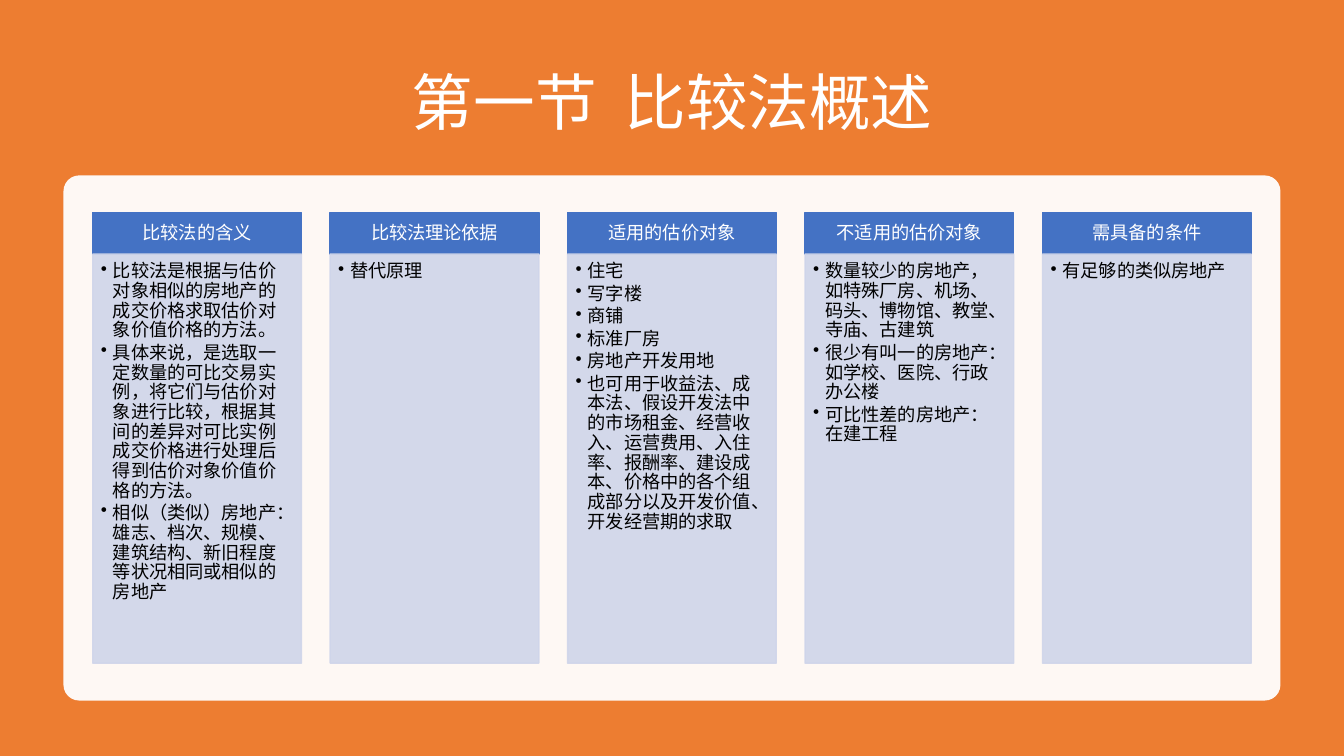
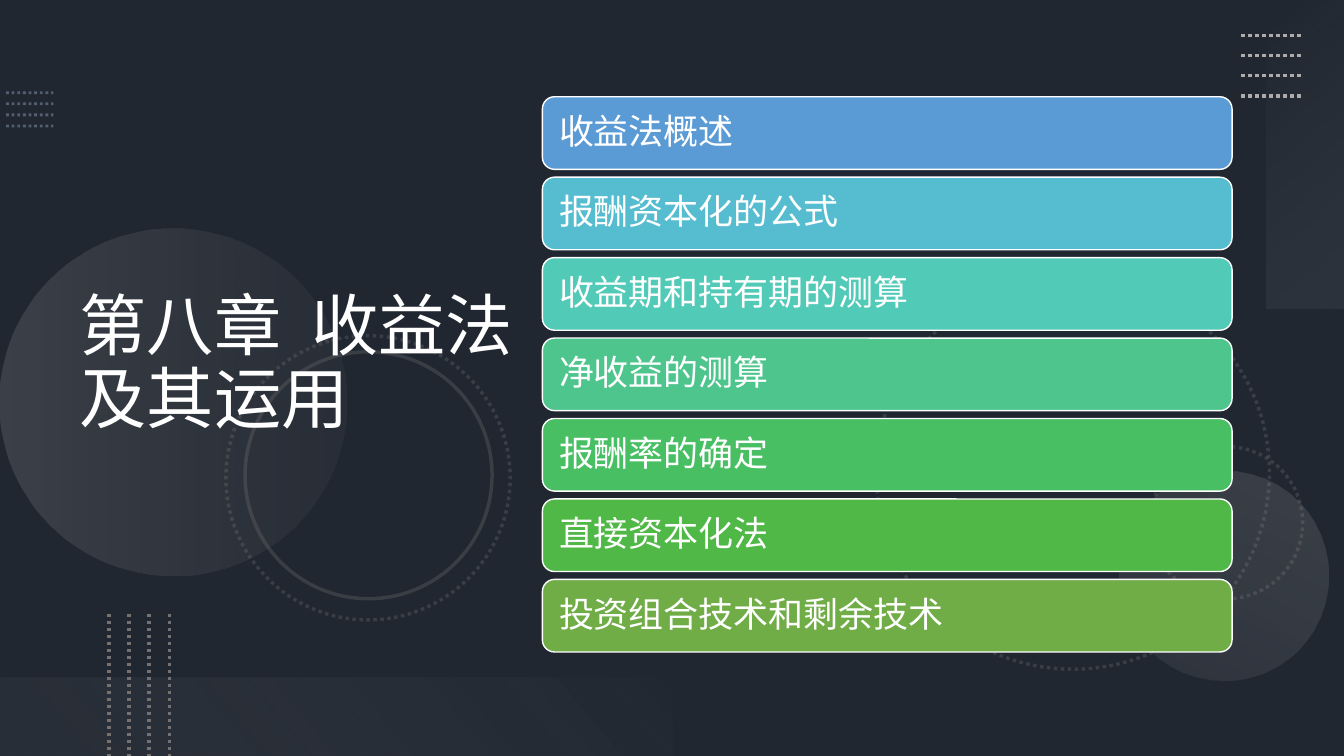
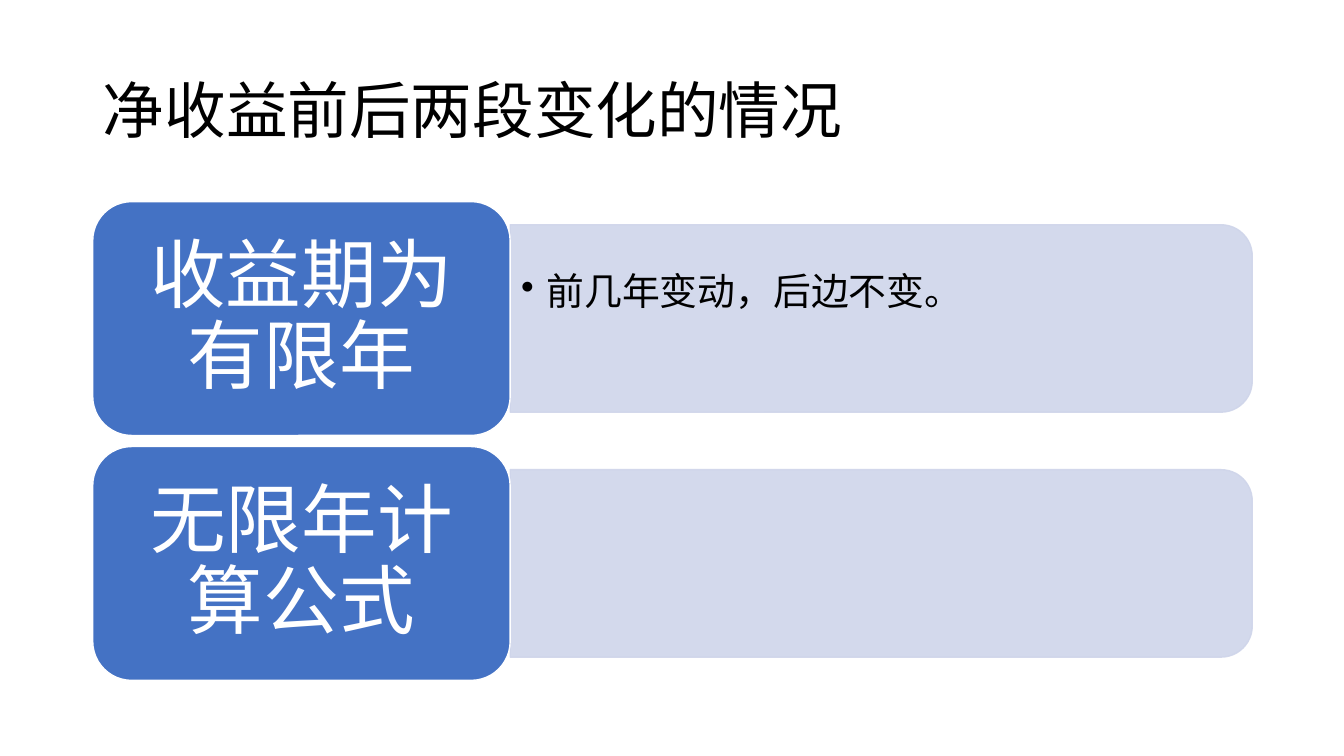
from dataclasses import dataclass

from lxml import etree
from pptx import Presentation
from pptx.dml.color import RGBColor
from pptx.enum.dml import MSO_LINE
from pptx.enum.shapes import MSO_CONNECTOR, MSO_SHAPE
from pptx.enum.text import MSO_ANCHOR, MSO_AUTO_SIZE, PP_ALIGN
from pptx.oxml.ns import qn
from pptx.util import Inches, Pt

RECT, ROUND = MSO_SHAPE.RECTANGLE, MSO_SHAPE.ROUNDED_RECTANGLE
OVAL, ROUND_TOP = MSO_SHAPE.OVAL, MSO_SHAPE.ROUND_2_SAME_RECTANGLE
STRAIGHT, DOTS = MSO_CONNECTOR.STRAIGHT, MSO_LINE.ROUND_DOT
LEFT, CENTER = PP_ALIGN.LEFT, PP_ALIGN.CENTER
TOP, MIDDLE = MSO_ANCHOR.TOP, MSO_ANCHOR.MIDDLE
SLIDE_W, SLIDE_H = 13.33, 7.5
TITLE_ONLY = 5


@dataclass(frozen=True)
class Theme:
    font: str = "Noto Sans CJK SC"
    white: str = "FFFFFF"
    black: str = "000000"
    orange: str = "ED7D31"
    blue: str = "4472C4"
    pale: str = "CFD5EA"
    slate: str = "44546A"
    steel: str = "8497B0"
    grey: str = "767171"
    silver: str = "AFABAB"
    title: int = 44
    chapter: int = 48
    column: int = 13
    item: int = 25
    tile: int = 54
    note: int = 27
    spacing: float = 0.9


T = Theme()


@dataclass(frozen=True)
class Box:
    x: float
    y: float
    w: float
    h: float


@dataclass(frozen=True)
class Stop:
    pos: int
    color: str
    alpha: int


@dataclass(frozen=True)
class Column:
    head: str
    points: list[str]


@dataclass(frozen=True)
class Ring:
    x: float
    y: float
    size: float
    rot: int
    dotted: bool = True


@dataclass(frozen=True)
class Fade:
    kind: int
    box: Box
    rot: int
    angle: int
    stops: list[Stop]


@dataclass(frozen=True)
class LineSet:
    """Four parallel dotted lines: first start, extent and step."""
    x: float
    y: float
    dx: float
    dy: float
    step_x: float
    step_y: float
    color: str
    width: float = 2.5
    alpha: int = 100


# Shared drawing helpers
def rgb(color: str) -> RGBColor:
    return RGBColor.from_string(color)


def set_alpha(sp, parent: str, alpha: int) -> None:
    if alpha < 100:
        clr = sp.element.spPr.find(parent + "/" + qn("a:solidFill") + "/" + qn("a:srgbClr"))
        etree.SubElement(clr, qn("a:alpha")).set("val", str(alpha * 1000))


def add_box(slide, kind, box: Box, fill="", line="", alpha=100, width=1.0, rot=0):
    sp = slide.shapes.add_shape(kind, Inches(box.x), Inches(box.y),
                                Inches(box.w), Inches(box.h))
    sp.shadow.inherit = False
    sp.rotation = rot
    if fill:
        sp.fill.solid()
        sp.fill.fore_color.rgb = rgb(fill)
        set_alpha(sp, ".", alpha)
    else:
        sp.fill.background()
    if line:
        sp.line.color.rgb = rgb(line)
        sp.line.width = Pt(width)
        set_alpha(sp, qn("a:ln"), alpha)
    else:
        sp.line.fill.background()
    return sp


def add_fade(slide, fade: Fade) -> None:
    sp = add_box(slide, fade.kind, fade.box, rot=fade.rot)
    grad = etree.Element(qn("a:gradFill"), rotWithShape="1")
    stops = etree.SubElement(grad, qn("a:gsLst"))
    for stop in fade.stops:
        gs = etree.SubElement(stops, qn("a:gs"), pos=str(stop.pos * 1000))
        clr = etree.SubElement(gs, qn("a:srgbClr"), val=stop.color)
        etree.SubElement(clr, qn("a:alpha"), val=str(stop.alpha * 1000))
    etree.SubElement(grad, qn("a:lin"), ang=str(fade.angle * 60000), scaled="0")
    spPr = sp.element.spPr
    spPr.replace(spPr.find(qn("a:noFill")), grad)


def add_lines(slide, lines: LineSet) -> None:
    for i in range(4):
        x, y = lines.x + i * lines.step_x, lines.y + i * lines.step_y
        cn = slide.shapes.add_connector(STRAIGHT, Inches(x), Inches(y),
                                        Inches(x + lines.dx), Inches(y + lines.dy))
        cn.line.color.rgb = rgb(lines.color)
        cn.line.width = Pt(lines.width)
        cn.line.dash_style = DOTS
        set_alpha(cn, qn("a:ln"), lines.alpha)
        etree.SubElement(cn.element.spPr, qn("a:effectLst"))


def write(sp, texts: list[str], size: int, color: str, align=LEFT, anchor=MIDDLE,
          insets=(0.1, 0.05, 0.1, 0.05), bullet=0.0, after=0.0) -> None:
    tf = sp.text_frame
    tf.word_wrap = True
    tf.auto_size = MSO_AUTO_SIZE.NONE
    tf.vertical_anchor = anchor
    tf.margin_left, tf.margin_top, tf.margin_right, tf.margin_bottom = map(Inches, insets)
    for i, text in enumerate(texts):
        p = tf.add_paragraph() if i else tf.paragraphs[0]
        p.alignment = align
        p.line_spacing = T.spacing
        p.space_after = Pt(after)
        if bullet:
            pPr = p._p.get_or_add_pPr()
            pPr.set("marL", str(Inches(bullet)))
            pPr.set("indent", str(-Inches(bullet)))
            etree.SubElement(pPr, qn("a:buChar"), char="•")
        r = p.add_run()
        r.text = text
        r.font.name = T.font
        r.font.size = Pt(size)
        r.font.color.rgb = rgb(color)


def new_slide(prs, background: str):
    slide = prs.slides.add_slide(prs.slide_layouts[TITLE_ONLY])
    slide.background.fill.solid()
    slide.background.fill.fore_color.rgb = rgb(background)
    return slide


def cover(slide, color: str, alpha=100) -> None:
    add_box(slide, RECT, Box(0, 0, SLIDE_W, SLIDE_H), color, alpha=alpha)


def set_title(slide, text: str, box: Box, size: int, color: str, align=LEFT) -> None:
    sp = slide.shapes.title
    sp.left, sp.top = Inches(box.x), Inches(box.y)
    sp.width, sp.height = Inches(box.w), Inches(box.h)
    write(sp, [text], size, color, align)
    sp.element.getparent().append(sp.element)  # bring in front of the backdrop


# Slide 1: five columns on a white panel
COLUMNS = [
    Column("比较法的含义", [
        "比较法是根据与估价对象相似的房地产的成交价格求取估价对象价值价格的方法。",
        "具体来说，是选取一定数量的可比交易实例，将它们与估价对象进行比较，"
        "根据其间的差异对可比实例成交价格进行处理后得到估价对象价值价格的方法。",
        "相似（类似）房地产：雄志、档次、规模、建筑结构、新旧程度等状况相同或相似的房地产"]),
    Column("比较法理论依据", ["替代原理"]),
    Column("适用的估价对象", [
        "住宅", "写字楼", "商铺", "标准厂房", "房地产开发用地",
        "也可用于收益法、成本法、假设开发法中的市场租金、经营收入、运营费用、入住率、"
        "报酬率、建设成本、价格中的各个组成部分以及开发价值、开发经营期的求取"]),
    Column("不适用的估价对象", [
        "数量较少的房地产，如特殊厂房、机场、码头、博物馆、教堂、寺庙、古建筑",
        "很少有叫一的房地产：如学校、医院、行政办公楼",
        "可比性差的房地产：在建工程"]),
    Column("需具备的条件", ["有足够的类似房地产"]),
]


def overview_slide(prs) -> None:
    slide = new_slide(prs, T.white)
    cover(slide, T.orange)
    set_title(slide, "第一节  比较法概述", Box(0.92, 0.5, 11.5, 1.1), T.title, T.white, CENTER)
    panel = add_box(slide, ROUND, Box(0.63, 1.74, 12.07, 5.21), T.white, alpha=95)
    panel.adjustments[0] = 0.03
    left, pitch, width = 0.92, 2.355, 2.07
    for i, col in enumerate(COLUMNS):
        x = left + i * pitch
        head = add_box(slide, RECT, Box(x, 2.11, width, 0.41), T.blue, T.blue)
        write(head, [col.head], T.column, T.white, CENTER, insets=(0.1, 0.06, 0.1, 0.06))
        body = add_box(slide, RECT, Box(x, 2.52, width, 4.06), T.pale, T.pale, alpha=90)
        write(body, col.points, T.column, T.black, anchor=TOP,
              insets=(0.08, 0.08, 0.1, 0.11), bullet=0.12, after=2)


# Slide 2: chapter contents on a dark, ornamented backdrop
TOPICS = [
    ("收益法概述", "5B9BD5"),
    ("报酬资本化的公式", "56BCD0"),
    ("收益期和持有期的测算", "52CAB8"),
    ("净收益的测算", "4DC58D"),
    ("报酬率的确定", "49BF64"),
    ("直接资本化法", "50B846"),
    ("投资组合技术和剩余技术", "70AD47"),
]
RINGS = [
    Ring(8.69, 2.74, 3.9, 75),
    Ring(11.41, 4.43, 1.51, 270),
    Ring(2.24, 3.33, 2.82, 75),
    Ring(2.43, 3.49, 2.45, 75, dotted=False),
]
FADES = [
    Fade(OVAL, Box(0, 2.27, 3.44, 3.44), 270, 90,
         [Stop(0, T.silver, 20), Stop(100, T.grey, 10)]),
    Fade(OVAL, Box(11.1, 4.67, 2.08, 2.08), 210, 90,
         [Stop(0, T.silver, 10), Stop(100, T.silver, 20)]),
    Fade(RECT, Box(11.42, 1.14, 3.06, 0.78), 270, 140,
         [Stop(0, "F5F5F5", 0), Stop(100, T.silver, 10)]),
    Fade(RECT, Box(0, 6.72, 6.67, 0.78), 180, 140,
         [Stop(10, T.grey, 10), Stop(100, "F1F0F0", 0)]),
]
LINE_SETS = [
    LineSet(0.06, 0.92, 0.47, 0, 0, 0.11, T.steel, 2, 50),
    LineSet(12.31, 0.35, 0.6, 0, 0, 0.2, T.silver),
    LineSet(1.08, 6.09, 0, 1.41, 0.2, 0, T.grey),
]


def contents_slide(prs) -> None:
    slide = new_slide(prs, T.slate)
    cover(slide, T.black, 53)
    for ring in RINGS:
        sp = add_box(slide, OVAL, Box(ring.x, ring.y, ring.size, ring.size),
                     line=T.grey, alpha=30, width=2.5, rot=ring.rot)
        if ring.dotted:
            sp.line.dash_style = DOTS
    for fade in FADES:
        add_fade(slide, fade)
    for lines in LINE_SETS:
        add_lines(slide, lines)
    set_title(slide, "第八章  收益法及其运用", Box(0.69, 0.54, 4.59, 6.17), T.chapter, T.white)
    top, pitch = 0.96, 0.798
    for i, (topic, color) in enumerate(TOPICS):
        bar = add_box(slide, ROUND, Box(5.38, top + i * pitch, 6.84, 0.72), color, T.white)
        write(bar, [topic], T.item, T.white, insets=(0.13, 0.1, 0.13, 0.1))


# Slide 3: two labelled bars
CASES = [
    Column("收益期为有限年", ["前几年变动，后边不变。"]),
    Column("无限年计算公式", []),
]


def cases_slide(prs) -> None:
    slide = new_slide(prs, T.white)
    set_title(slide, "净收益前后两段变化的情况", Box(0.92, 0.4, 11.5, 1.45), T.title, T.black)
    tile_w, tile_h, bar_w, bar_h = 4.14, 2.32, 7.36, 1.86
    left, top, pitch = 0.92, 2, 2.43
    bar_left = left + tile_w
    for i, case in enumerate(CASES):
        y = top + i * pitch
        mid = y + tile_h / 2
        # The bar is drawn upright and turned a quarter
        add_box(slide, ROUND_TOP,
                Box(bar_left + (bar_w - bar_h) / 2, mid - bar_w / 2, bar_h, bar_w),
                T.pale, T.pale, alpha=90, rot=90)
        if case.points:
            note = slide.shapes.add_textbox(Inches(bar_left), Inches(mid - 0.84),
                                            Inches(7.27), Inches(1.18))
            write(note, case.points, T.note, T.black,
                  insets=(0.11, 0.06, 0.11, 0.06), bullet=0.25)
        tile = add_box(slide, ROUND, Box(left, y, tile_w, tile_h), T.blue, T.white)
        write(tile, [case.head], T.tile, T.white, CENTER, insets=(0.34, 0.22, 0.34, 0.22))


def main() -> None:
    prs = Presentation()
    prs.slide_width, prs.slide_height = Inches(SLIDE_W), Inches(SLIDE_H)
    overview_slide(prs)
    contents_slide(prs)
    cases_slide(prs)
    prs.save("out.pptx")


if __name__ == "__main__":
    main()
